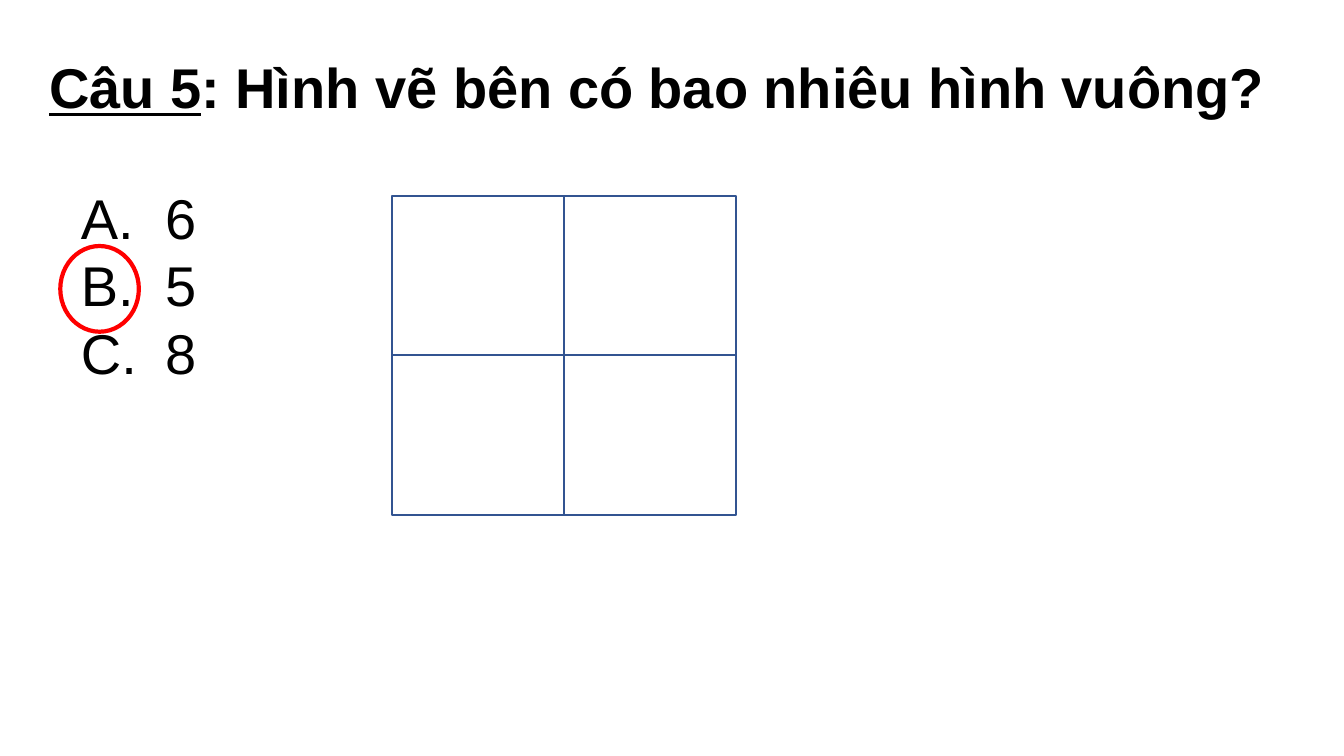
from pptx import Presentation
from pptx.dml.color import RGBColor
from pptx.enum.shapes import MSO_SHAPE
from pptx.enum.text import MSO_AUTO_SIZE, PP_ALIGN
from pptx.util import Cm, Pt

LABEL = "Câu 5"
QUESTION = ": Hình vẽ bên có bao nhiêu hình vuông?"
ANSWERS = [("A.", "6"), ("B.", "5"), ("C.", "8")]

THEME = {
    "font": "Arial",
    "size": Pt(40),
    "gap": Pt(46),
    "text": RGBColor(0, 0, 0),
    "ring": RGBColor(0xFF, 0, 0),
    "grid": RGBColor(0x32, 0x54, 0x91),
}

TEXT_BOX = (0.99, 1.19, 32.61, 8.81)
RING_BOX = (1.52, 6.2, 1.98, 2.16)
GRID_LEFT, GRID_TOP = 9.88, 4.93
CELL_WIDTH, CELL_HEIGHT = 4.34, 4.02
GRID_SIZE = 2
LABEL_LEFT, VALUE_LEFT = 0.8, 2.92


def style(run, bold=False, under=False):
    font = run.font
    font.name, font.size = THEME["font"], THEME["size"]
    font.color.rgb = THEME["text"]
    font.bold, font.underline = bold, under


def hang(para):
    """Indent the answer letter and let its tab stop at the value."""
    props = para._p.get_or_add_pPr()
    props.set("marL", str(Cm(VALUE_LEFT)))
    props.set("indent", str(Cm(LABEL_LEFT - VALUE_LEFT)))


def add_text(slide):
    frame = slide.shapes.add_textbox(*map(Cm, TEXT_BOX)).text_frame
    frame.word_wrap = True
    frame.auto_size = MSO_AUTO_SIZE.SHAPE_TO_FIT_TEXT
    title = frame.paragraphs[0]
    title.alignment = PP_ALIGN.JUSTIFY
    for words, under in ((LABEL, True), (QUESTION, False)):
        run = title.add_run()
        run.text = words
        style(run, bold=True, under=under)
    for index, answer in enumerate(ANSWERS):
        para = frame.add_paragraph()
        para.text = "\t".join(answer)
        para.alignment = PP_ALIGN.JUSTIFY
        para.space_before = Pt(0) if index else THEME["gap"]
        hang(para)
        style(para.runs[0])


def add_outline(slide, kind, box, color, width):
    shape = slide.shapes.add_shape(kind, *map(Cm, box))
    shape.shadow.inherit = False
    shape.fill.background()
    shape.line.color.rgb = color
    shape.line.width = Pt(width)


def main():
    deck = Presentation()
    deck.slide_width, deck.slide_height = Cm(33.87), Cm(19.05)
    slide = deck.slides.add_slide(deck.slide_layouts[6])
    add_text(slide)
    add_outline(slide, MSO_SHAPE.OVAL, RING_BOX, THEME["ring"], 3)
    for row in range(GRID_SIZE):
        for col in range(GRID_SIZE):
            cell = (GRID_LEFT + col * CELL_WIDTH, GRID_TOP + row * CELL_HEIGHT,
                    CELL_WIDTH, CELL_HEIGHT)
            add_outline(slide, MSO_SHAPE.RECTANGLE, cell, THEME["grid"], 1.5)
    deck.save("out.pptx")


if __name__ == "__main__":
    main()
